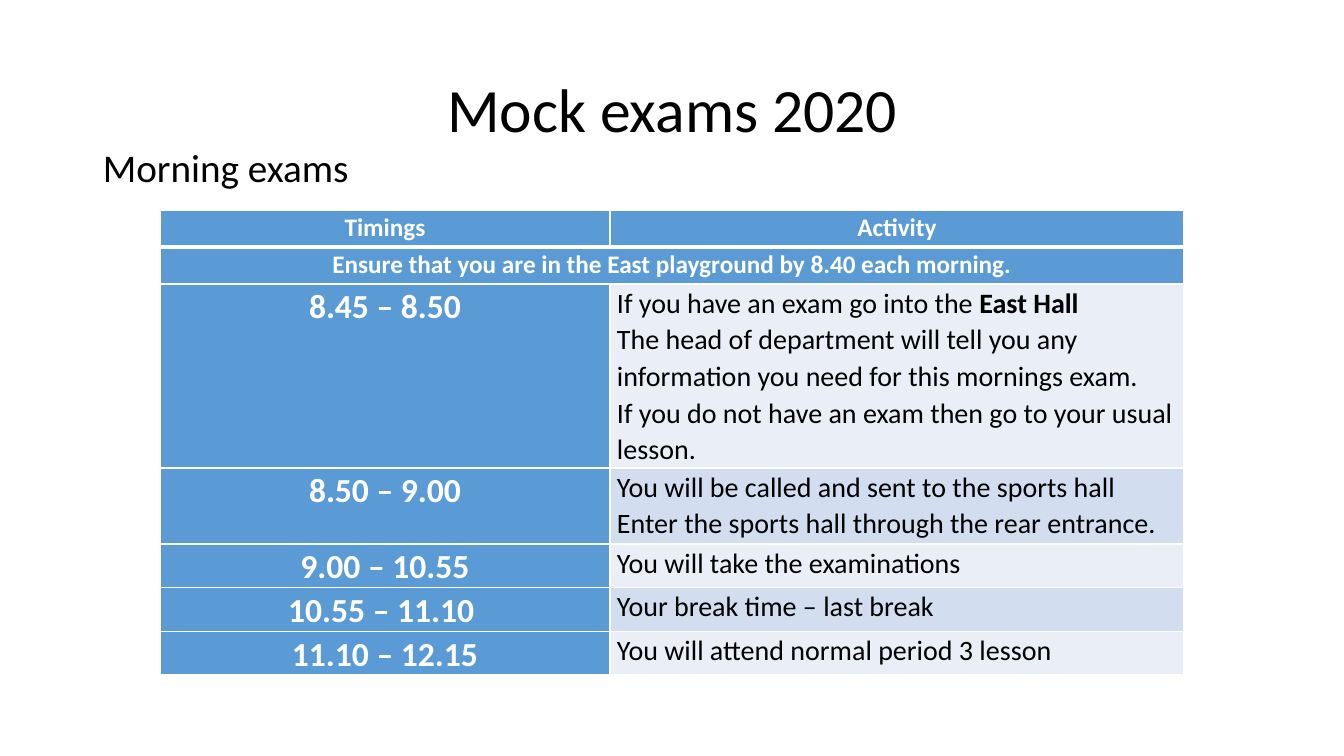
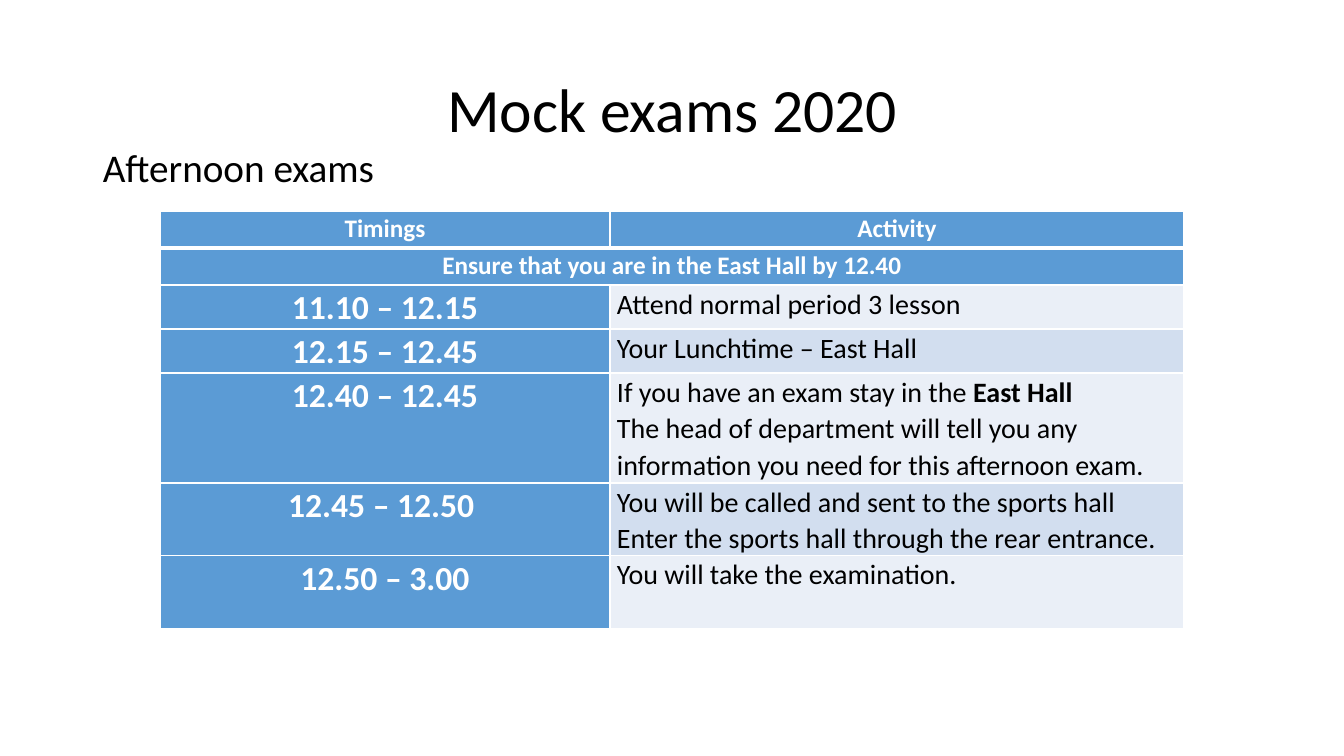
import pptx
import pptx.dml.color
import pptx.enum.text
import pptx.oxml
import pptx.oxml.ns
import pptx.util

PX = 9071  # EMU in one px
MID = pptx.enum.text.PP_ALIGN.CENTER
LEFT = pptx.enum.text.PP_ALIGN.LEFT
BLUE, PALE, TINT = "5B9BD5", "EAEFF7", "D2DEEF"
BLACK, WHITE = "000000", "FFFFFF"

# Text styles: size, colour, bold, alignment, line spacing
TITLE = (44, BLACK, False, MID, 0.9)
SUB = (28, BLACK, False, LEFT, 0.9)
HEAD = (18, WHITE, True, MID, 1.07)
TIME = (24, WHITE, True, MID, 1.07)
TASK = (20, BLACK, False, LEFT, 1.07)


def rgb(code):
    return pptx.dml.color.RGBColor.from_string(code)


def write(frame, text, style):
    """One paragraph a line; words between stars are bold."""
    size, color, bold, align, gap = style
    frame.word_wrap = True
    for i, line in enumerate(text.split("\n")):
        para = frame.add_paragraph() if i else frame.paragraphs[0]
        para.alignment, para.line_spacing = align, gap
        for j, part in enumerate(line.split("*")):
            if part:
                run = para.add_run()
                run.text = part
                look = {"name": "Calibri", "size": pptx.util.Pt(size),
                        "bold": bold or j % 2 == 1}
                for key, value in look.items():
                    setattr(run.font, key, value)
                run.font.color.rgb = rgb(color)


# Content: subtitle, table top, notice, then rows of height, time, activity
CALL = ("You will be called and sent to the sports hall\n"
        "Enter the sports hall through the rear entrance.")
TELL = "The head of department will tell you any information you need for this "
days = [
    ("Morning exams", 210,
     "Ensure that you are in the East playground by 8.40 each morning.", [
         (184, "8.45 – 8.50",
          "If you have an exam go into the *East Hall*\n" + TELL
          + "mornings exam.\n"
          "If you do not have an exam then go to your usual lesson."),
         (76, "8.50 – 9.00", CALL),
         (44, "9.00 – 10.55", "You will take the examinations"),
         (44, "10.55 – 11.10 ", "Your break time – last break"),
         (43, "11.10 – 12.15", "You will attend normal period 3 lesson")]),
    ("Afternoon exams", 211,
     "Ensure that you are in the East Hall by 12.40", [
         (44, "11.10 – 12.15", "Attend normal period 3 lesson"),
         (44, "12.15 – 12.45", "Your Lunchtime – East Hall"),
         (110, "12.40 – 12.45",
          "If you have an exam stay in the *East Hall*\n" + TELL
          + "afternoon exam."),
         (73, "12.45 – 12.50 ", CALL),
         (73, "12.50 – 3.00", "You will take the examination.")]),
]

deck = pptx.Presentation()
deck.slide_width, deck.slide_height = 1344 * PX, 756 * PX

for sub, top, notice, plan in days:
    slide = deck.slides.add_slide(deck.slide_layouts[6])

    # Title and subtitle
    for text, style, box, anchor in (
            ("Mock exams 2020", TITLE, (93, 40, 1159, 146), "MIDDLE"),
            (sub, SUB, (93, 144, 1159, 60), "TOP")):
        frame = slide.shapes.add_textbox(*[v * PX for v in box]).text_frame
        frame.vertical_anchor = getattr(pptx.enum.text.MSO_ANCHOR, anchor)
        write(frame, text, style)

    # Timetable
    rows = [(37, "Timings", "Activity"), (37, notice, "")] + plan
    tall = sum(row[0] for row in rows)
    box = [v * PX for v in (160, top, 1024, tall)]
    table = slide.shapes.add_table(len(rows), 2, *box).table
    for col, wide in zip(table.columns, (450, 574)):
        col.width = wide * PX
    table.cell(1, 0).merge(table.cell(1, 1))

    for r, (high, *texts) in enumerate(rows):
        table.rows[r].height = high * PX
        for c, text in enumerate(texts):
            cell = table.cell(r, c)
            pad = {"margin_left": 7 * PX, "margin_right": 7 * PX,
                   "margin_top": 0, "margin_bottom": 0}
            for key, value in pad.items():
                setattr(cell, key, value)

            # White borders, thick under the header row
            props = cell._tc.get_or_add_tcPr()
            for side in "LRTB":
                thick = (r, side) in ((0, "B"), (1, "T"))
                props.append(pptx.oxml.parse_xml(
                    f'<a:ln{side} {pptx.oxml.ns.nsdecls("a")} '
                    f'w="{38100 if thick else 12700}"><a:solidFill>'
                    f'<a:srgbClr val="{WHITE}"/></a:solidFill></a:ln{side}>'))

            band = (PALE, TINT)[r % 2] if r > 1 and c else BLUE
            cell.fill.solid()
            cell.fill.fore_color.rgb = rgb(band)
            if text:
                style = HEAD if r < 2 else (TIME, TASK)[c]
                write(cell.text_frame, text, style)

deck.save("out.pptx")
